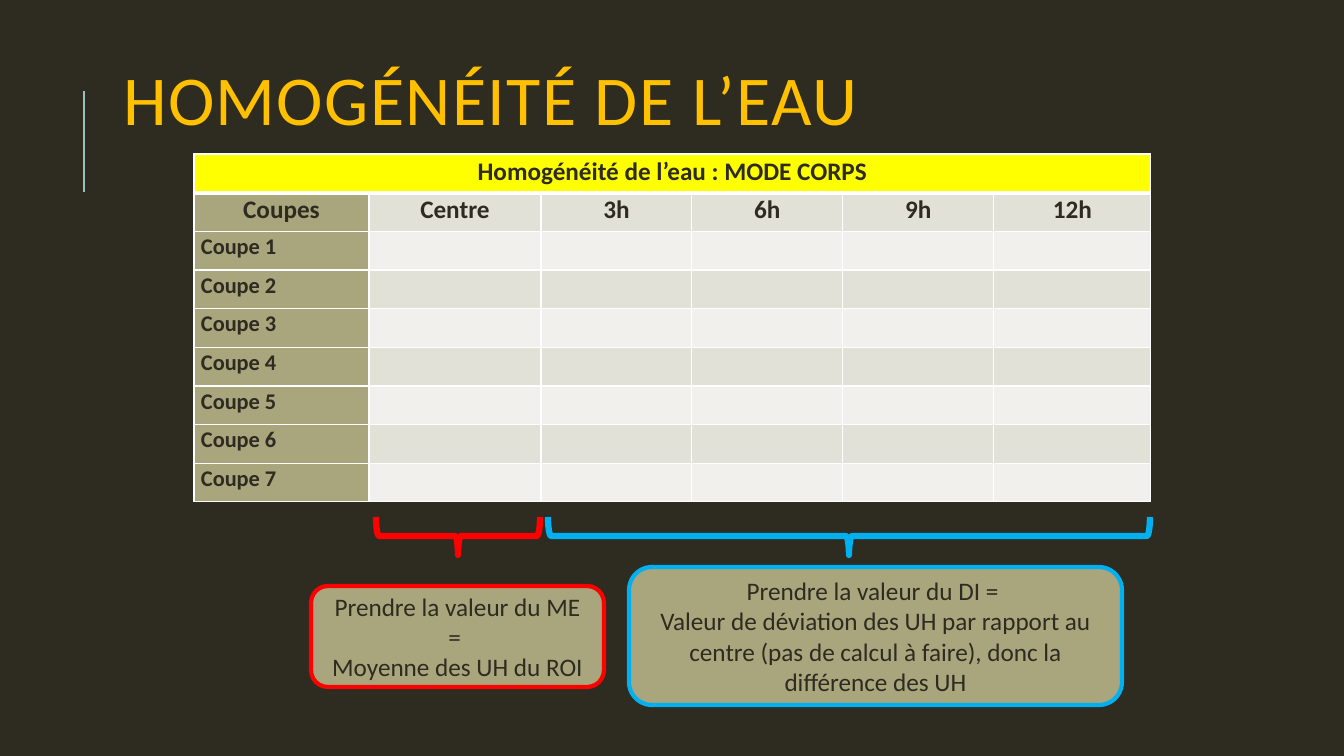
import pptx
import pptx.util
import pptx.dml.color
import pptx.enum.shapes
import pptx.enum.text
import pptx.oxml
from dataclasses import dataclass

# Content
TITLE = "HOMOGÉNÉITÉ DE L’EAU"
TABLE_TITLE = "Homogénéité de l’eau : MODE CORPS"
HEADINGS = ["Coupes", "Centre", "3h", "6h", "9h", "12h"]
SLICES = [f"Coupe {number}" for number in range(1, 8)]
# Each note: colour, brace (left, width), box (left, top, width, height), lines
NOTES = [
    ("FF0000", (376, 164), (311, 586, 293, 101),
     ["Prendre la valeur du ME = ", "Moyenne des UH du ROI"]),
    ("00B0F0", (548, 602), (629, 567, 493, 138),
     ["Prendre la valeur du DI = ",
      "Valeur de déviation des UH par rapport au centre (pas de calcul à faire), "
      "donc la différence des UH"]),
]

# Geometry in px
SLIDE_SIZE = (1344, 756)
TITLE_BOX = (113, 65, 1072, 80)
ACCENT = (84, 91, 192)  # x, top, bottom
TABLE_BOX = (194, 154, 957, 348)
COLUMNS = [175, 172, 151, 151, 151, 157]
BRACE_TOP, BRACE_DEPTH = 517, 38
CELL_INSET = 7


@dataclass(frozen=True)
class Theme:
    font: str = "Calibri"
    background: str = "2E2B21"
    ink: str = "2E2B21"
    title: str = "FFC000"
    accent: str = "9CBEBD"
    banner: str = "FFFF00"
    olive: str = "A9A57C"
    dark_band: str = "E2E1D7"
    light_band: str = "F1F0EC"
    border: str = "FFFFFF"
    title_size: int = 50
    text_size: int = 18
    slice_size: int = 16


THEME = Theme()
ALIGN = pptx.enum.text.PP_ALIGN
MIDDLE = pptx.enum.text.MSO_ANCHOR.MIDDLE
SHAPE = pptx.enum.shapes.MSO_SHAPE


# Helpers
def px(*lengths):
    return [pptx.util.Emu(round(length * 914400 / 100.8)) for length in lengths]


def rgb(code):
    return pptx.dml.color.RGBColor.from_string(code)


def paint(target, color):
    target.fill.solid()
    target.fill.fore_color.rgb = rgb(color)


def outline(target, color, width):
    target.line.color.rgb = rgb(color)
    target.line.width = pptx.util.Pt(width)


def write(paragraph, text, size, color, align, bold=False, spacing=None):
    paragraph.alignment = align
    paragraph.line_spacing = spacing
    run = paragraph.add_run()
    run.text = text
    run.font.name = THEME.font
    run.font.size = pptx.util.Pt(size)
    run.font.bold = bold
    run.font.color.rgb = rgb(color)
    return run


def set_borders(cell, bottom):
    properties = cell._tc.get_or_add_tcPr()
    widths = {"lnL": 1, "lnR": 1, "lnT": 1, "lnB": bottom}
    for position, (side, width) in enumerate(widths.items()):
        properties.insert(position, pptx.oxml.parse_xml(
            f'<a:{side} xmlns:a="http://schemas.openxmlformats.org/drawingml/2006/main" '
            f'w="{width * 12700}"><a:solidFill><a:srgbClr val="{THEME.border}"/>'
            f'</a:solidFill></a:{side}>'))


def cell_style(row, column):
    """Return fill, text, size and alignment of one cell."""
    if row == 0:
        return THEME.banner, TABLE_TITLE if column == 0 else "", THEME.text_size, ALIGN.CENTER
    band = THEME.dark_band if row % 2 else THEME.light_band
    fill = THEME.olive if column == 0 else band
    if row == 1:
        return fill, HEADINGS[column], THEME.text_size, ALIGN.CENTER
    return fill, SLICES[row - 2] if column == 0 else "", THEME.slice_size, ALIGN.LEFT


def add_title(slide):
    title = slide.shapes.title
    title.left, title.top, title.width, title.height = px(*TITLE_BOX)
    frame = title.text_frame
    frame.word_wrap = True
    frame.vertical_anchor = MIDDLE
    frame.auto_size = pptx.enum.text.MSO_AUTO_SIZE.NONE
    run = write(frame.paragraphs[0], TITLE, THEME.title_size, THEME.title,
                ALIGN.LEFT, spacing=0.8)
    run.font._element.set("spc", "100")

    x, top, bottom = ACCENT
    accent = slide.shapes.add_connector(
        pptx.enum.shapes.MSO_CONNECTOR.STRAIGHT, *px(x, bottom, x, top))
    outline(accent, THEME.accent, 1.5)
    accent._element.spPr.append(pptx.oxml.parse_xml(
        '<a:effectLst xmlns:a="http://schemas.openxmlformats.org/drawingml/2006/main"/>'))


def add_measurements(slide):
    row_count = len(SLICES) + 2
    table = slide.shapes.add_table(row_count, len(HEADINGS), *px(*TABLE_BOX)).table
    for column, width in zip(table.columns, px(*COLUMNS)):
        column.width = width
    for row in table.rows:
        row.height = px(TABLE_BOX[3] / row_count)[0]
    table.cell(0, 0).merge(table.cell(0, len(HEADINGS) - 1))
    for row in range(row_count):
        for column in range(len(HEADINGS)):
            cell = table.cell(row, column)
            fill, text, size, align = cell_style(row, column)
            paint(cell, fill)
            set_borders(cell, bottom=3 if row == 0 else 1)
            cell.margin_left = cell.margin_right = px(CELL_INSET)[0]
            cell.margin_top = cell.margin_bottom = 0
            if text:
                write(cell.text_frame.paragraphs[0], text, size, THEME.ink, align,
                      bold=True, spacing=1.07)


def add_note(slide, color, brace_span, box, lines):
    # A left brace turned to point down: its height becomes the span
    left, span = brace_span
    shift = (span - BRACE_DEPTH) / 2
    brace = slide.shapes.add_shape(
        SHAPE.LEFT_BRACE, *px(left + shift, BRACE_TOP - shift, BRACE_DEPTH, span))
    brace.rotation = 270
    brace.shadow.inherit = False
    brace.fill.background()
    outline(brace, color, 4.5)

    note = slide.shapes.add_shape(SHAPE.ROUNDED_RECTANGLE, *px(*box))
    note.shadow.inherit = False
    paint(note, THEME.olive)
    outline(note, color, 3)
    frame = note.text_frame
    frame.word_wrap = True
    frame.vertical_anchor = MIDDLE
    for index, line in enumerate(lines):
        paragraph = frame.add_paragraph() if index else frame.paragraphs[0]
        write(paragraph, line, THEME.text_size, THEME.ink, ALIGN.CENTER)


def main():
    deck = pptx.Presentation()
    deck.slide_width, deck.slide_height = px(*SLIDE_SIZE)
    slide = deck.slides.add_slide(deck.slide_layouts[5])
    paint(slide.background, THEME.background)
    add_title(slide)
    add_measurements(slide)
    for note in NOTES:
        add_note(slide, *note)
    deck.save("out.pptx")


if __name__ == "__main__":
    main()
